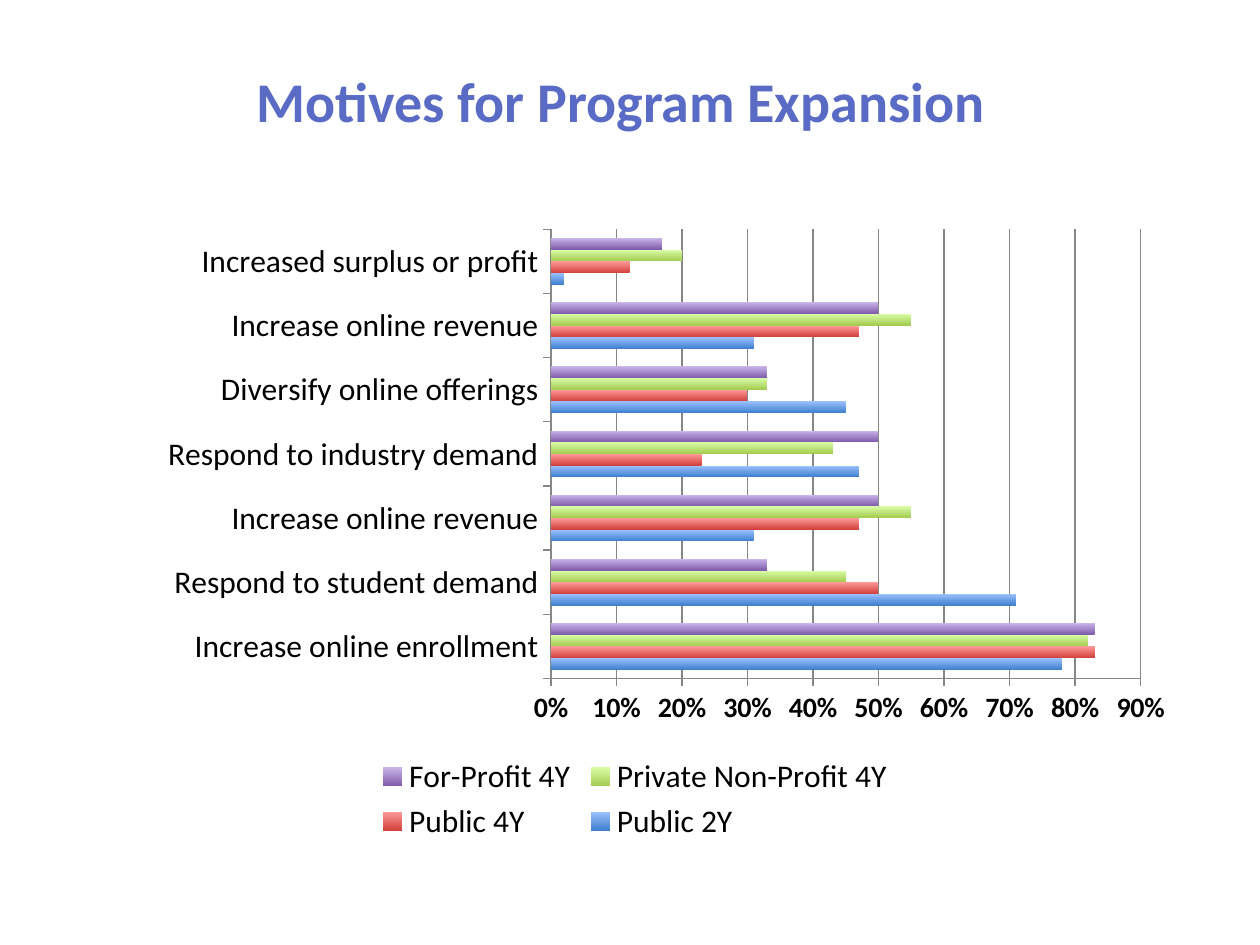
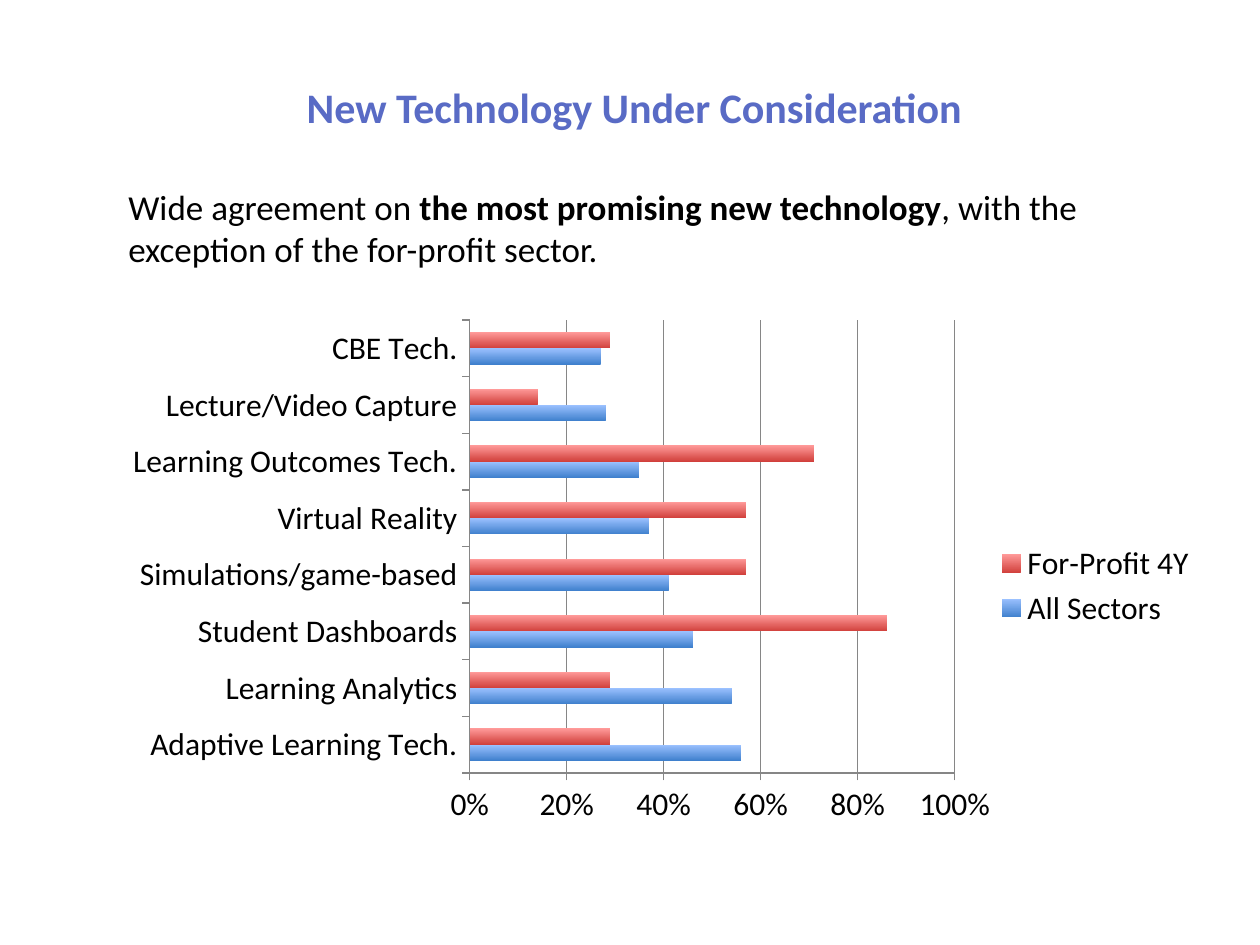
from pptx import Presentation, util as u
from pptx.chart.data import CategoryChartData
from pptx.dml.color import RGBColor
from pptx.enum import chart as charts, text
from pptx.oxml import parse_xml
from pptx.oxml.ns import nsdecls

FONT = "Calibri"
TITLE_COLOUR, TEXT_COLOUR, LINE_COLOUR = "596BC5", "000000", "868686"

# Bar gradients: bottom colour, top colour
BLUE, RED = ("3F80CD", "9BC1FF"), ("D1403C", "FF9A99")
GREEN, PURPLE = ("A3CB50", "DAFDA7"), ("7F5BAB", "C9B5E8")

LEAD = [("Wide agreement on ", False),
        ("the most promising new technology", True),
        (", with the exception of the for-profit sector.", False)]

SLIDES = [
    {
        "title": "Motives for Program Expansion",
        "title_at": (1.25, 0.4, 6.87, 0.79), "title_size": 32, "title_indent": 0.49,
        "chart_at": (0.65, 1.53, 8.78, 5.19),
        "plot": (0.424, 0.056, 0.533, 0.687),
        "legend": charts.XL_LEGEND_POSITION.BOTTOM,
        "scale": (0.9, 0.1), "scale_size": 16, "scale_bold": True,
        "categories": ["Increase online enrollment", "Respond to student demand",
                       "Increase online revenue", "Respond to industry demand",
                       "Diversify online offerings", "Increase online revenue",
                       "Increased surplus or profit"],
        "series": [
            ("Public 2Y", BLUE, (0.78, 0.71, 0.31, 0.47, 0.45, 0.31, 0.02)),
            ("Public 4Y", RED, (0.83, 0.5, 0.47, 0.23, 0.3, 0.47, 0.12)),
            ("Private Non-Profit 4Y", GREEN, (0.82, 0.45, 0.55, 0.43, 0.33, 0.55, 0.2)),
            ("For-Profit 4Y", PURPLE, (0.83, 0.33, 0.5, 0.5, 0.33, 0.5, 0.17)),
        ],
    },
    {
        "title": "New Technology Under Consideration",
        "title_at": (1.58, 0.45, 6.91, 0.79), "title_size": 24, "title_indent": 0,
        "lead": LEAD, "lead_at": (0.92, 1.42, 8.12, 0.77),
        "chart_at": (0.69, 2.42, 8.91, 4.46),
        "plot": (0.341, 0.027, 0.432, 0.806),
        "legend": charts.XL_LEGEND_POSITION.RIGHT,
        "scale": (1.0, 0.2), "scale_size": 18, "scale_bold": False,
        "categories": ["Adaptive Learning Tech.", "Learning Analytics",
                       "Student Dashboards", "Simulations/game-based",
                       "Virtual Reality", "Learning Outcomes Tech.",
                       "Lecture/Video Capture", "CBE Tech."],
        "series": [
            ("All Sectors", BLUE, (0.56, 0.54, 0.46, 0.41, 0.37, 0.35, 0.28, 0.27)),
            ("For-Profit 4Y", RED, (0.29, 0.29, 0.86, 0.57, 0.57, 0.71, 0.14, 0.29)),
        ],
    },
]


def colour(value):
    return RGBColor.from_string(value)


def inches(place):
    return [u.Inches(length) for length in place]


def style_font(font, size, value=TEXT_COLOUR, bold=False):
    font.name, font.size, font.bold = FONT, u.Pt(size), bold
    font.color.rgb = colour(value)


def add_run(para, words, size, value, bold):
    span = para.add_run()
    span.text = words
    style_font(span.font, size, value, bold)


def add_title(page, content):
    title = page.shapes.title
    title.left, title.top, title.width, title.height = inches(content["title_at"])
    frame = title.text_frame
    frame.word_wrap = True
    frame.auto_size = text.MSO_AUTO_SIZE.NONE
    frame.vertical_anchor = text.MSO_ANCHOR.MIDDLE
    frame.margin_left = u.Inches(0.1 + content["title_indent"])
    para = frame.paragraphs[0]
    para.alignment = text.PP_ALIGN.CENTER
    add_run(para, content["title"], content["title_size"], TITLE_COLOUR, True)


def add_lead(page, content):
    frame = page.shapes.add_textbox(*inches(content["lead_at"])).text_frame
    frame.word_wrap = True
    for words, bold in content["lead"]:
        add_run(frame.paragraphs[0], words, 20, TEXT_COLOUR, bold)


def style_line(line):
    line.color.rgb = colour(LINE_COLOUR)
    line.width = u.Pt(0.75)


def place_plot(chart, plot):
    parts = "".join(f'<c:{tag} val="{value}"/>' for tag, value in zip("xywh", plot))
    layout = parse_xml(
        f'<c:layout {nsdecls("c")}><c:manualLayout><c:layoutTarget val="inner"/>'
        f'<c:xMode val="edge"/><c:yMode val="edge"/>{parts}</c:manualLayout></c:layout>')
    area = chart.plots[0]._element.getparent()
    for old in area.findall(layout.tag):
        area.remove(old)
    area.insert(0, layout)


def add_bar_chart(page, content):
    data = CategoryChartData(number_format="0%")
    data.categories = content["categories"]
    for name, _, values in content["series"]:
        data.add_series(name, values)
    chart = page.shapes.add_chart(charts.XL_CHART_TYPE.BAR_CLUSTERED,
                                  *inches(content["chart_at"]), data).chart
    chart.has_title = False
    style_font(chart.font, 18)
    place_plot(chart, content["plot"])

    # Bars
    bars = chart.plots[0]
    bars.gap_width, bars.overlap, bars.vary_by_categories = 150, 0, False
    for series, (_, gradient, _) in zip(bars.series, content["series"]):
        fill = series.format.fill
        fill.gradient()
        fill.gradient_angle = 90
        for stop, value in zip(fill.gradient_stops, gradient):
            stop.color.rgb = colour(value)

    # Axes
    for axis in (chart.category_axis, chart.value_axis):
        axis.major_tick_mark = charts.XL_TICK_MARK.OUTSIDE
        axis.minor_tick_mark = charts.XL_TICK_MARK.NONE
        style_line(axis.format.line)
    axis = chart.value_axis
    axis.minimum_scale = 0
    axis.maximum_scale, axis.major_unit = content["scale"]
    axis.has_major_gridlines = True
    style_line(axis.major_gridlines.format.line)
    axis.tick_labels.number_format = "0%"
    axis.tick_labels.number_format_is_linked = False
    style_font(axis.tick_labels.font, content["scale_size"], bold=content["scale_bold"])

    # Legend
    chart.has_legend = True
    chart.legend.position = content["legend"]
    chart.legend.include_in_layout = False
    style_font(chart.legend.font, 18)


def main():
    deck = Presentation()
    deck.slide_width, deck.slide_height = inches((10, 7.5))
    for content in SLIDES:
        page = deck.slides.add_slide(deck.slide_layouts[5])
        add_title(page, content)
        if "lead" in content:
            add_lead(page, content)
        add_bar_chart(page, content)
    deck.save("out.pptx")


if __name__ == "__main__":
    main()
